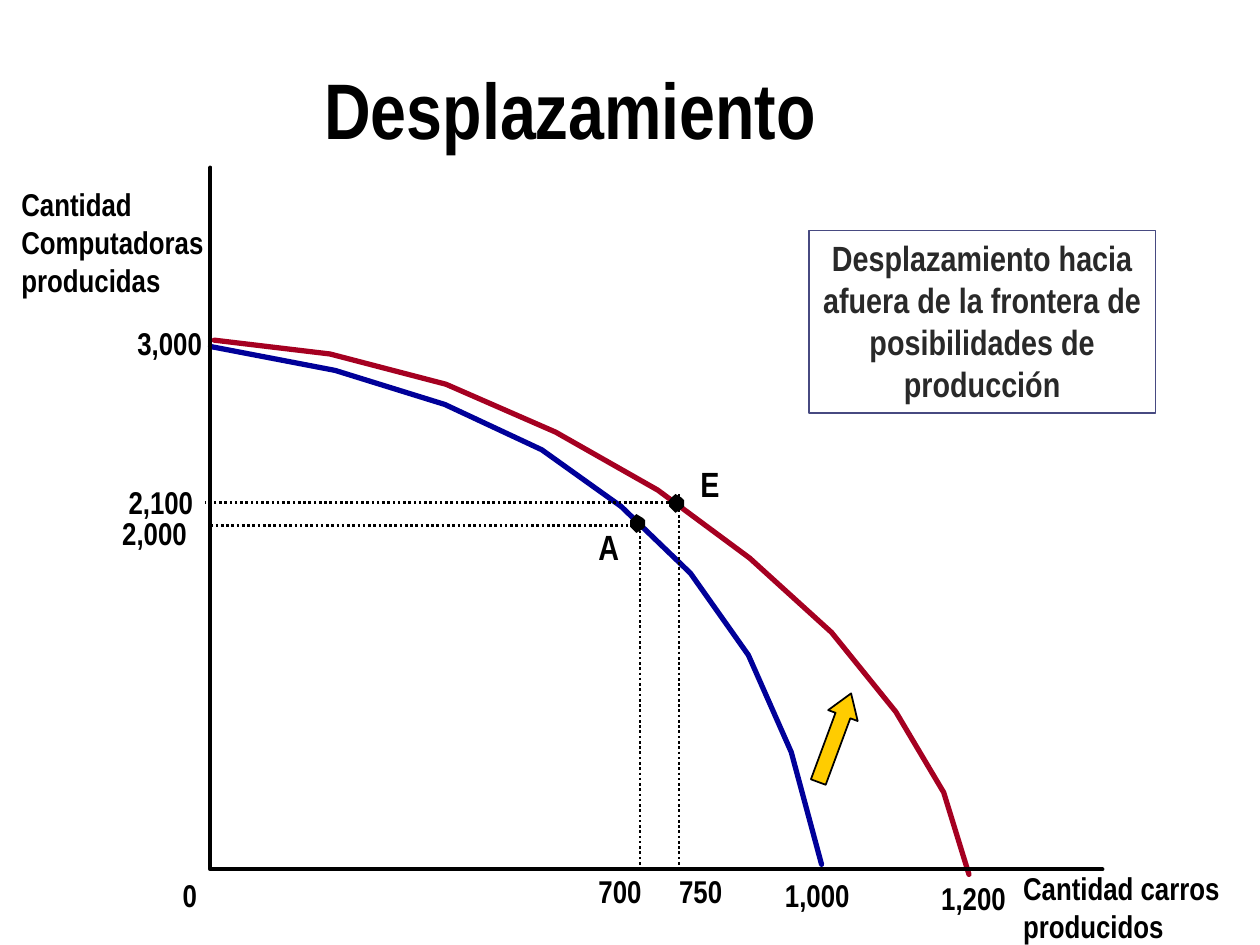
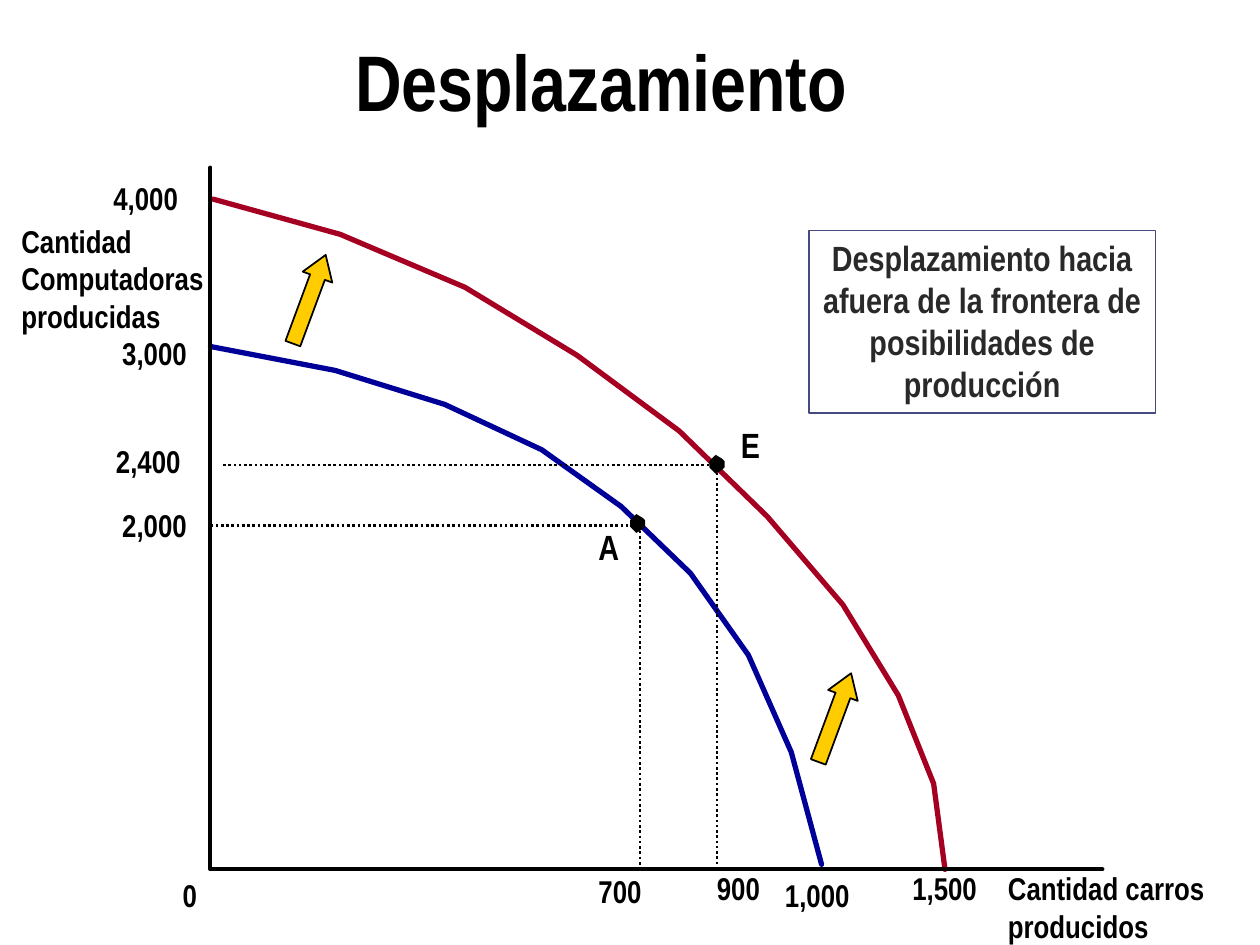
from lxml import etree
from pptx import Presentation
from pptx.dml.color import RGBColor
from pptx.enum.dml import MSO_LINE_DASH_STYLE as DASH
from pptx.enum.shapes import MSO_CONNECTOR as CONNECTOR, MSO_SHAPE as SHAPE
from pptx.enum.text import MSO_ANCHOR as ANCHOR, MSO_AUTO_SIZE as AUTO_SIZE, PP_ALIGN as ALIGN
from pptx.oxml.ns import qn
from pptx.util import Inches, Pt

FONT = "Arial Narrow"
TITLE_ONLY = 5
COLORS = {
    "ink": "000000",
    "old_frontier": "000099",
    "new_frontier": "A50021",
    "arrow": "FFCC00",
    "note_text": "292929",
    "note_line": "474A81",
}

# Places on the slide, in inches
ORIGIN_X, ORIGIN_Y = 1.67, 6.9
AXES = [(ORIGIN_X, 1.33), (ORIGIN_X, ORIGIN_Y), (8.75, ORIGIN_Y)]
OLD_FRONTIER = [(6.52, 6.86), (6.28, 5.97), (5.94, 5.2), (5.48, 4.55), (4.93, 4.02),
                (4.3, 3.57), (3.53, 3.21), (2.66, 2.94), (1.67, 2.75)]
SMALL_SHIFT = [(7.69, 6.94), (7.49, 6.29), (7.11, 5.65), (6.6, 5.02), (5.95, 4.43),
               (5.22, 3.89), (4.41, 3.43), (3.54, 3.05), (2.62, 2.81), (1.7, 2.7)]
LARGE_SHIFT = [(7.5, 6.9), (7.41, 6.22), (7.13, 5.52), (6.69, 4.8), (6.09, 4.1),
               (5.39, 3.42), (4.58, 2.82), (3.69, 2.28), (2.7, 1.86), (1.69, 1.58)]
DOT_OUTLINE = [(0.05, 0.15), (0.1, 0.12), (0.12, 0.1), (0.12, 0.05), (0.1, 0.03),
               (0.05, 0), (0.02, 0.03), (0, 0.05), (0, 0.1), (0.02, 0.12)]


def rgb(name):
    return RGBColor.from_string(COLORS[name])


def style_line(line, color, width):
    line.color.rgb = rgb(color)
    line.width = Pt(width)


def style_text(frame, size, color="ink", align=ALIGN.LEFT):
    for paragraph in frame.paragraphs:
        paragraph.alignment = align
        for run in paragraph.runs:
            run.font.name = FONT
            run.font.size = Pt(size)
            run.font.bold = True
            run.font.color.rgb = rgb(color)


def set_margins(frame, left, top, right, bottom):
    frame.margin_left, frame.margin_top = Inches(left), Inches(top)
    frame.margin_right, frame.margin_bottom = Inches(right), Inches(bottom)


def add_title(slide, left, top, width, height):
    title = slide.shapes.title
    title.left, title.top = Inches(left), Inches(top)
    title.width, title.height = Inches(width), Inches(height)
    frame = title.text_frame
    frame.text = "Desplazamiento"
    frame.word_wrap = True
    frame.auto_size = AUTO_SIZE.NONE
    frame.vertical_anchor = ANCHOR.MIDDLE
    set_margins(frame, 0.1, 0.05, 0.05, 0.05)
    style_text(frame, 45, align=ALIGN.CENTER)


def add_label(slide, text, left, top, width, height=0.3, size=18, wrap=False):
    label = slide.shapes.add_textbox(Inches(left), Inches(top), Inches(width), Inches(height))
    frame = label.text_frame
    frame.text = text
    frame.word_wrap = wrap
    frame.auto_size = AUTO_SIZE.SHAPE_TO_FIT_TEXT
    set_margins(frame, 0, 0, 0, 0)
    style_text(frame, size)


def add_value(slide, text, left, top):
    """Axis value, in a box as wide as its digits and commas."""
    commas = text.count(",")
    add_label(slide, text, left, top, 0.115 * (len(text) - commas) + 0.06 * commas)


def add_outline(slide, points, closed):
    corners = [(Inches(x), Inches(y)) for x, y in points]
    builder = slide.shapes.build_freeform(*corners[0])
    builder.add_line_segments(corners[1:], close=closed)
    outline = builder.convert_to_shape()
    outline.shadow.inherit = False
    return outline


def add_curve(slide, points, color, width=3):
    curve = add_outline(slide, points, closed=False)
    curve.fill.background()
    style_line(curve.line, color, width)
    curve.line._get_or_add_ln().set("cap", "rnd")


def add_dot(slide, left, top):
    dot = add_outline(slide, [(left + x, top + y) for x, y in DOT_OUTLINE], closed=True)
    dot.fill.solid()
    dot.fill.fore_color.rgb = rgb("ink")
    dot.line.fill.background()


def add_guide(slide, start, end):
    guide = slide.shapes.add_connector(CONNECTOR.STRAIGHT, *map(Inches, start + end))
    style_line(guide.line, "ink", 1.5)
    guide.line.dash_style = DASH.ROUND_DOT
    etree.SubElement(guide._element.spPr, qn("a:effectLst"))


def add_point(slide, letter, dot, letter_at, across, down):
    """Lettered point with dotted guides; across and down are (start, end) pairs."""
    add_guide(slide, *across)
    add_guide(slide, *down)
    add_dot(slide, *dot)
    add_label(slide, letter, *letter_at, width=0.16, height=0.34, size=20)


def add_shift_arrow(slide, left, top):
    arrow = slide.shapes.add_shape(SHAPE.UP_ARROW, Inches(left), Inches(top),
                                   Inches(0.25), Inches(0.75))
    arrow.adjustments[0], arrow.adjustments[1] = 0.5, 0.75
    arrow.rotation = 20.3
    arrow.shadow.inherit = False
    arrow.fill.solid()
    arrow.fill.fore_color.rgb = rgb("arrow")
    style_line(arrow.line, "ink", 1)


def add_note(slide):
    note = slide.shapes.add_shape(SHAPE.RECTANGLE, Inches(6.42), Inches(1.83),
                                  Inches(2.75), Inches(1.45))
    note.shadow.inherit = False
    note.fill.background()
    style_line(note.line, "note_line", 1)
    frame = note.text_frame
    frame.text = "Desplazamiento hacia afuera de la frontera de posibilidades de producción"
    frame.word_wrap = True
    frame.vertical_anchor = ANCHOR.TOP
    style_text(frame, 20, "note_text", ALIGN.CENTER)


def add_frontier_slide(prs, title_box, new_frontier, point_e, axis_titles, values, arrows):
    slide = prs.slides.add_slide(prs.slide_layouts[TITLE_ONLY])
    add_title(slide, *title_box)
    add_curve(slide, new_frontier, "new_frontier")
    add_curve(slide, OLD_FRONTIER, "old_frontier")
    add_curve(slide, AXES, "ink", 2.25)

    computers_top, cars_left = axis_titles
    add_label(slide, "Cantidad\nComputadoras\nproducidas", 0.17, computers_top, 3.17, 0.9,
              wrap=True)
    add_label(slide, "Cantidad carros producidos", cars_left, ORIGIN_Y, 2, 0.6, wrap=True)

    add_point(slide, "A", (5, 4.08), (4.75, 4.17),
              across=((ORIGIN_X, 4.17), (5.08, 4.17)), down=((5.08, 4.17), (5.08, 6.92)))
    add_point(slide, "E", **point_e)

    shared_values = [("0", 1.45, 6.95), ("700", 4.75, 6.92), ("1,000", 6.23, 6.95)]
    for value in shared_values + values:
        add_value(slide, *value)
    for arrow in arrows:
        add_shift_arrow(slide, *arrow)
    add_note(slide)


def main():
    prs = Presentation()
    prs.slide_width, prs.slide_height = Inches(10), Inches(7.5)
    add_frontier_slide(
        prs,
        title_box=(0, 0.17, 9, 1.37),
        new_frontier=SMALL_SHIFT,
        point_e={"dot": (5.31, 3.92), "letter_at": (5.56, 3.67),
                 "across": ((5.39, 3.99), (1.63, 3.99)),
                 "down": ((5.39, 3.92), (5.39, 6.92))},
        axis_titles=(1.47, 8.12),
        values=[("3,000", 1.09, 2.57), ("2,100", 1.02, 3.83), ("2,000", 0.97, 4.08),
                ("750", 5.39, 6.92), ("1,200", 7.47, 6.98)],
        arrows=[(6.5, 5.48)],
    )
    add_frontier_slide(
        prs,
        title_box=(0, 0.11, 9.49, 1.05),
        new_frontier=LARGE_SHIFT,
        point_e={"dot": (5.63, 3.61), "letter_at": (5.88, 3.36),
                 "across": ((5.63, 3.69), (1.75, 3.69)),
                 "down": ((5.69, 3.75), (5.69, 6.9))},
        axis_titles=(1.76, 8),
        values=[("4,000", 0.9, 1.42), ("3,000", 0.97, 2.65), ("2,400", 0.92, 3.51),
                ("2,000", 0.97, 4.02), ("900", 5.69, 6.9), ("1,500", 7.24, 6.9)],
        arrows=[(2.33, 2), (6.5, 5.32)],
    )
    prs.save("out.pptx")


if __name__ == "__main__":
    main()
